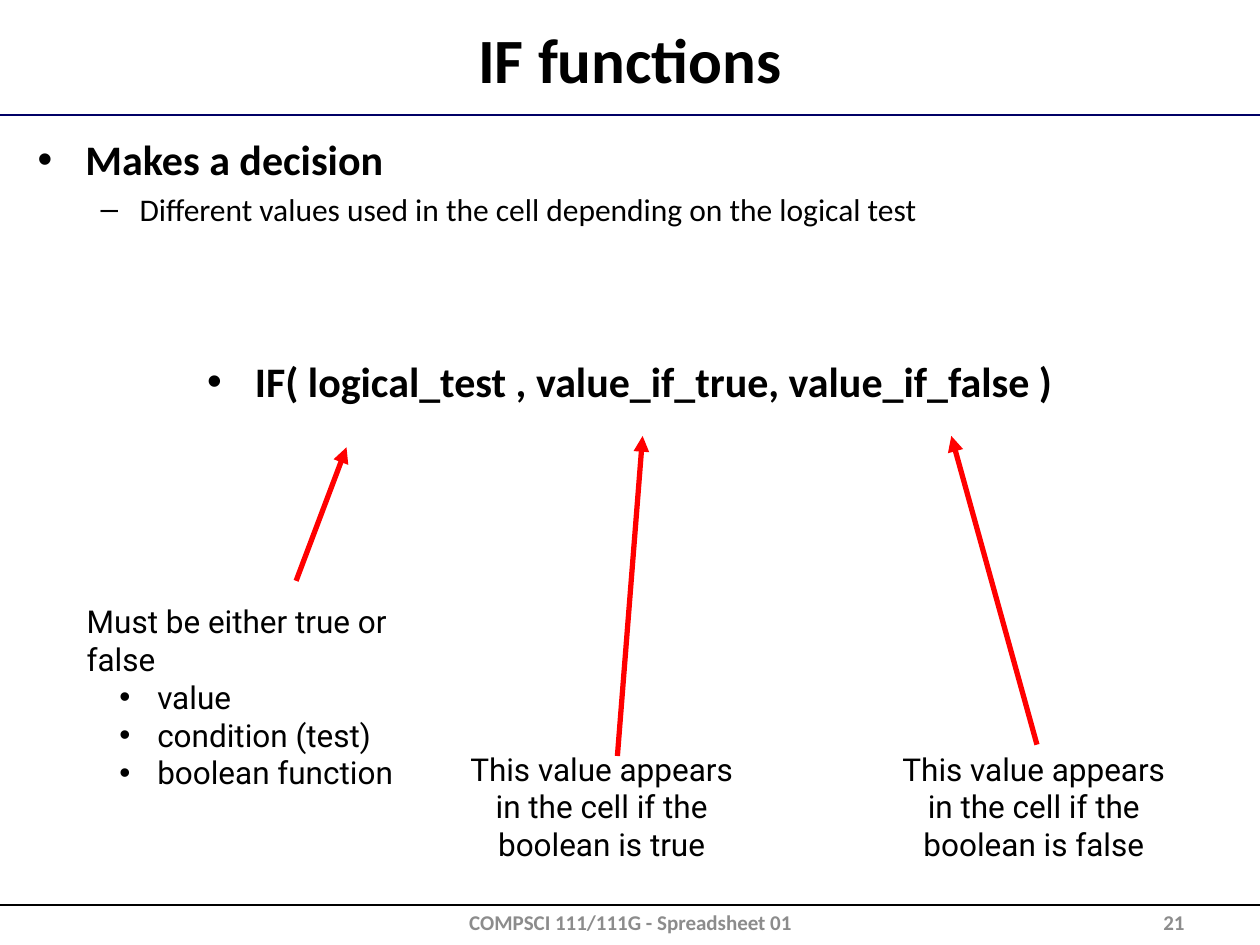
"""Build the IF functions slide with its annotated formula."""
from lxml.etree import SubElement
from pptx import Presentation
from pptx.dml.color import RGBColor
from pptx.enum.shapes import MSO_CONNECTOR
from pptx.enum.text import MSO_ANCHOR, PP_ALIGN
from pptx.oxml.ns import qn
from pptx.util import Inches, Pt

THEME = {
    "ink": RGBColor(0, 0, 0),
    "rule": RGBColor(0, 0, 0x66),
    "arrow": RGBColor(0xFF, 0, 0),
    "muted": RGBColor(0x8C, 0x8C, 0x8C),
    "title": {"name": "Calibri", "size": Pt(36), "bold": True},
    "head": {"name": "Calibri", "size": Pt(24), "bold": True},
    "sub": {"name": "Calibri", "size": Pt(18), "bold": False},
    "note": {"name": "Roboto", "size": Pt(18), "bold": False},
    "footer": {"name": "Calibri", "size": Pt(12), "bold": True},
}


def add_text(box, paragraphs, align=PP_ALIGN.LEFT, anchor=MSO_ANCHOR.TOP, color="ink"):
    tf = s.shapes.add_textbox(*map(Inches, box)).text_frame
    tf.word_wrap, tf.vertical_anchor = True, anchor
    for i, (text, style, fmt) in enumerate(paragraphs):
        p = tf.paragraphs[0] if i == 0 else tf.add_paragraph()
        p.alignment = fmt.get("align", align)
        p.space_before = Pt(fmt.get("before", 0))
        if "bullet" in fmt:
            pPr = p._p.get_or_add_pPr()
            pPr.set("marL", str(Inches(fmt["left"])))
            pPr.set("indent", str(Inches(-fmt["hang"])))
            SubElement(pPr, qn("a:buFont"), typeface="Arial")
            SubElement(pPr, qn("a:buChar"), char=fmt["bullet"])
        r = p.add_run()
        r.text = text
        for name, value in THEME[style].items():
            setattr(r.font, name, value)
        r.font.color.rgb = THEME[color]


def add_line(start, end, color, width, arrow=False):
    line = s.shapes.add_connector(MSO_CONNECTOR.STRAIGHT, *map(Inches, start + end))
    line.line.color.rgb = THEME[color]
    line.line.width = Pt(width)
    if arrow:
        SubElement(line.line._get_or_add_ln(), qn("a:tailEnd"), type="triangle")
    SubElement(line._element.spPr, qn("a:effectLst"))


prs = Presentation()
prs.slide_width, prs.slide_height = Inches(10), Inches(7.5)
s = prs.slides.add_slide(prs.slide_layouts[6])

for y, color in ((0.91, "rule"), (7.18, "ink")):
    add_line((0, y), (10, y), color, 1)

add_text((0.1, 0.12, 9.8, 0.69), [("IF functions", "title", {})],
         PP_ALIGN.CENTER, MSO_ANCHOR.MIDDLE)

main = {"bullet": "•", "left": 0.38, "hang": 0.38}
dash = {"bullet": "–", "left": 0.81, "hang": 0.31, "before": 3.6}
add_text((0.2, 1.01, 9.6, 5.98), [
    ("Makes a decision", "head", main),
    ("Different values used in the cell depending on the logical test", "sub", dash),
    ("IF( logical_test , value_if_true, value_if_false )", "head",
     {**main, "before": 73, "align": PP_ALIGN.CENTER}),
])

item = {"bullet": "•", "left": 0.56, "hang": 0.3}
kinds = ("value", "condition (test)", "boolean function")
add_text((0.59, 4.73, 3.17, 1.3),
         [("Must be either true or false", "note", {})]
         + [(kind, "note", item) for kind in kinds])

for x, outcome in ((3.55, "true"), (6.98, "false")):
    note = f"This value appears in the cell if the boolean is {outcome}"
    add_text((x, 5.9, 2.45, 1), [(note, "note", {})], PP_ALIGN.CENTER)

for start, end in (((2.35, 4.61), (2.75, 3.55)),
                   ((4.9, 6), (5.1, 3.46)),
                   ((8.23, 5.91), (7.55, 3.46))):
    add_line(start, end, "arrow", 3, arrow=True)

for x, width, text, align in ((3.42, 3.17, "COMPSCI 111/111G - Spreadsheet 01", PP_ALIGN.CENTER),
                              (7.17, 2.33, "21", PP_ALIGN.RIGHT)):
    add_text((x, 7.18, width, 0.27), [(text, "footer", {})], align,
             MSO_ANCHOR.MIDDLE, "muted")

prs.save("out.pptx")
